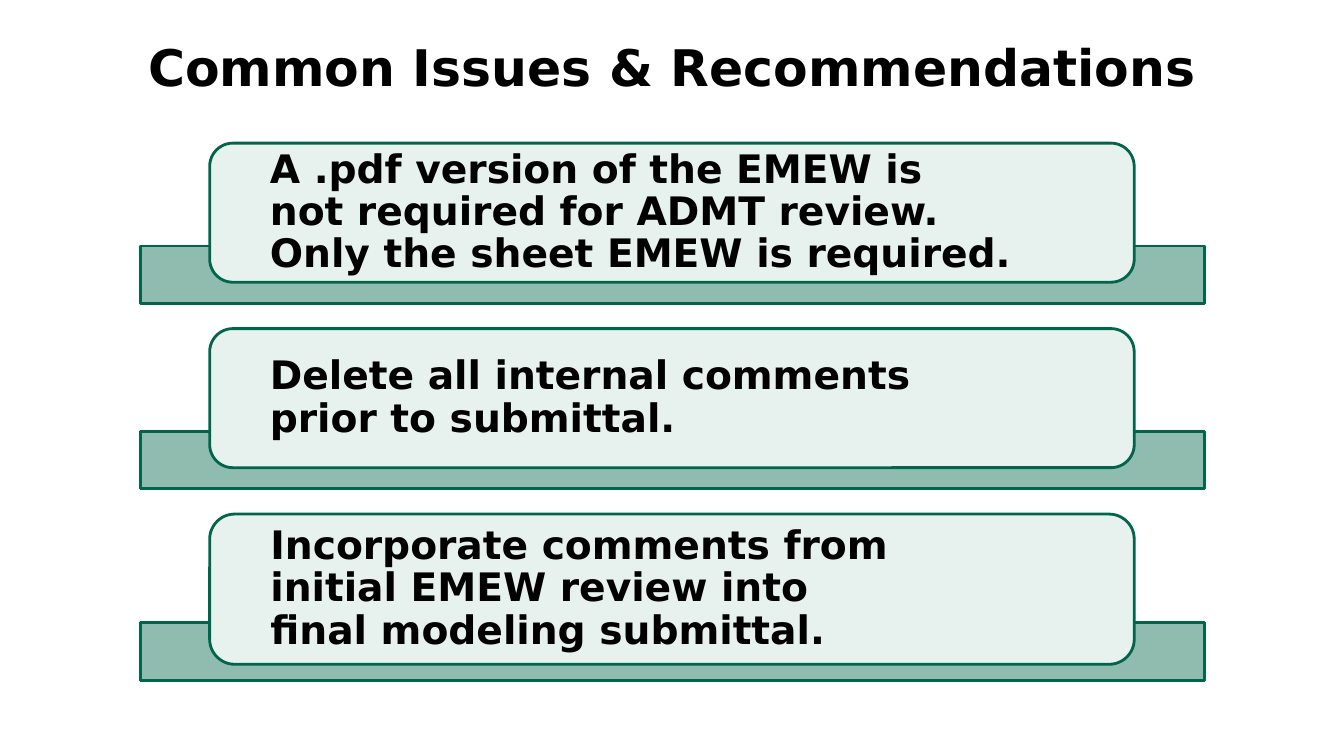
from dataclasses import dataclass

from lxml import etree
from pptx import Presentation
from pptx.dml.color import RGBColor
from pptx.enum.shapes import MSO_SHAPE
from pptx.enum.text import MSO_ANCHOR, PP_ALIGN
from pptx.oxml.ns import qn
from pptx.util import Inches, Pt

RECTANGLE = MSO_SHAPE.RECTANGLE
ROUNDED = MSO_SHAPE.ROUNDED_RECTANGLE
MIDDLE = MSO_ANCHOR.MIDDLE
LEFT, CENTER = PP_ALIGN.LEFT, PP_ALIGN.CENTER

TITLE = "Common Issues & Recommendations"
ISSUES = [
    (["A .pdf version of the EMEW is", "not required for ADMT review.",
      "Only the sheet EMEW is required."], 1.38, 1.02),
    (["Delete all internal comments", "prior to submittal."], 1.38, 1.02),
    (["Incorporate comments from", "initial EMEW review into",
      "final modeling submittal."], 1.49, 1.08),
]


@dataclass(frozen=True)
class Theme:
    font: str = "DejaVu Sans"
    text: RGBColor = RGBColor(0x00, 0x00, 0x00)
    band: RGBColor = RGBColor(0x85, 0xB5, 0xA8)
    card: RGBColor = RGBColor(0xE7, 0xF1, 0xEE)
    line: RGBColor = RGBColor(0x01, 0x65, 0x4B)
    band_opacity: int = 90
    line_width: float = 2
    title_size: int = 36
    card_size: int = 28


THEME = Theme()
SLIDE_WIDTH, SLIDE_HEIGHT = 13.33, 7.5
TITLE_TOP, TITLE_HEIGHT = 0.2, 0.92
FIRST_TOP, ROW_STEP = 1.42, 1.84
CARD_LEFT, CARD_WIDTH = 2.08, 9.17
BAND_LEFT, BAND_WIDTH, BAND_HEIGHT = 1.39, 10.56, 0.57


def write_lines(frame, lines, size, alignment):
    frame.word_wrap = True
    frame.vertical_anchor = MIDDLE
    para = frame.paragraphs[0]
    para.alignment = alignment
    for index, line in enumerate(lines):
        if index:
            para.add_line_break()
        span = para.add_run()
        span.text = line
        span.font.name = THEME.font
        span.font.size = Pt(size)
        span.font.bold = True
        span.font.color.rgb = THEME.text
    return para


def add_panel(page, kind, left, top, width, height, color):
    panel = page.shapes.add_shape(
        kind, Inches(left), Inches(top), Inches(width), Inches(height))
    panel.shadow.inherit = False
    panel.fill.solid()
    panel.fill.fore_color.rgb = color
    panel.line.color.rgb = THEME.line
    panel.line.width = Pt(THEME.line_width)
    return panel


def add_band(page, top):
    band = add_panel(page, RECTANGLE, BAND_LEFT, top, BAND_WIDTH, BAND_HEIGHT, THEME.band)
    color = band.fill._xPr.find(qn("a:solidFill"))[0]
    etree.SubElement(color, qn("a:alpha"), val=str(THEME.band_opacity * 1000))


def add_card(page, lines, top, height):
    card = add_panel(page, ROUNDED, CARD_LEFT, top, CARD_WIDTH, height, THEME.card)
    frame = card.text_frame
    frame.margin_left, frame.margin_right = Inches(0.53), Inches(0.33)
    frame.margin_top = frame.margin_bottom = Inches(0.03)
    para = write_lines(frame, lines, THEME.card_size, LEFT)
    para.line_spacing = 0.9


def main():
    deck = Presentation()
    deck.slide_width, deck.slide_height = Inches(SLIDE_WIDTH), Inches(SLIDE_HEIGHT)
    page = deck.slides.add_slide(deck.slide_layouts.get_by_name("Title Only"))

    title = page.shapes.title
    title.left, title.top = Inches(0), Inches(TITLE_TOP)
    title.width, title.height = Inches(SLIDE_WIDTH), Inches(TITLE_HEIGHT)
    write_lines(title.text_frame, [TITLE], THEME.title_size, CENTER)

    for row, (lines, height, band_offset) in enumerate(ISSUES):
        top = FIRST_TOP + row * ROW_STEP
        add_band(page, top + band_offset)
        add_card(page, lines, top, height)

    deck.save("out.pptx")


if __name__ == "__main__":
    main()
